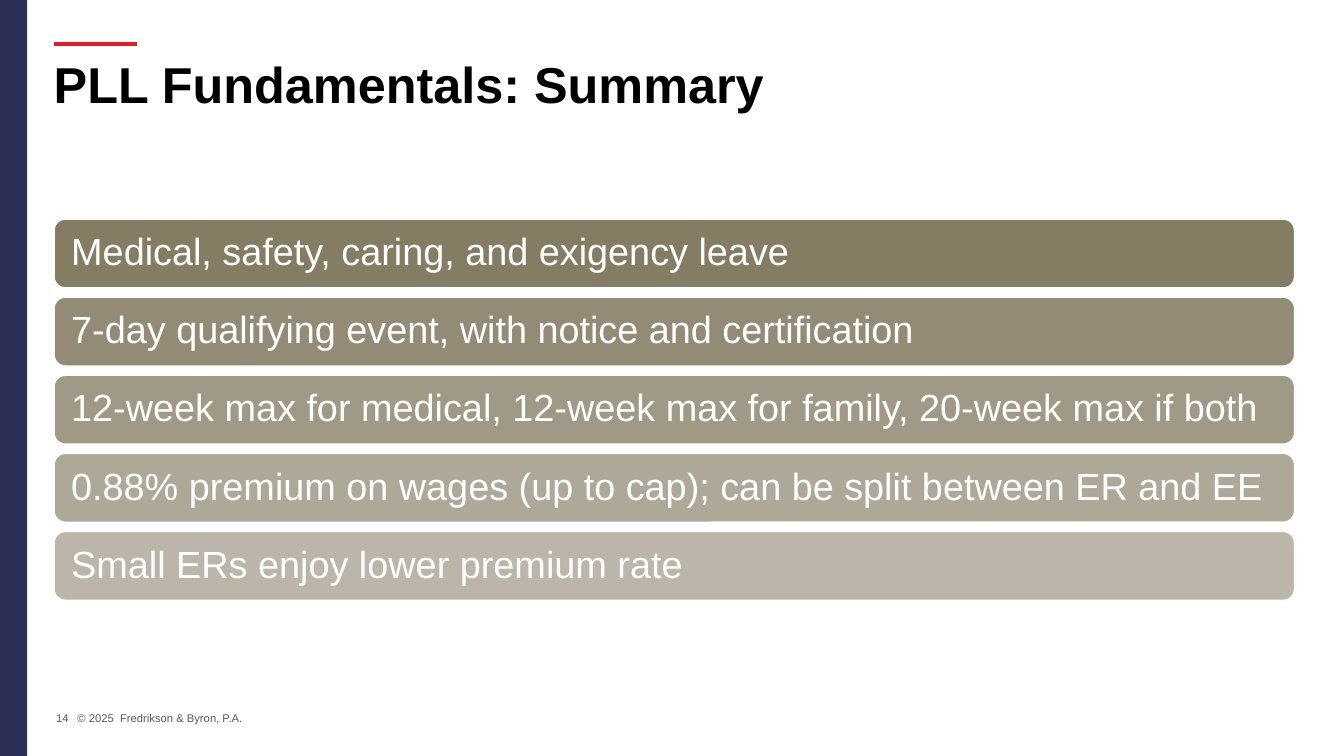
from dataclasses import dataclass

from lxml.etree import SubElement
from pptx import Presentation
from pptx.dml.color import RGBColor
from pptx.enum.shapes import MSO_CONNECTOR, MSO_SHAPE
from pptx.enum.text import MSO_ANCHOR, MSO_AUTO_SIZE, PP_ALIGN
from pptx.oxml.ns import qn
from pptx.util import Inches, Pt

SLIDE_WIDTH, SLIDE_HEIGHT = Inches(13.33), Inches(7.5)
NAVY, RED, TAUPE = "2C3054", "E31B23", "786E54"
WHITE, BLACK, GRAY = "FFFFFF", "000000", "595959"

MARGIN = 4
BAR_TOP, BAR_PITCH = 28.93, 10.33
BAR_WIDTH, BAR_HEIGHT = 92.35, 9.2


@dataclass(frozen=True)
class Box:
    """Place on the slide, in percent of its width and height."""
    left: float
    top: float
    width: float
    height: float

    def lengths(self) -> tuple[int, int, int, int]:
        return (across(self.left), down(self.top),
                across(self.width), down(self.height))


@dataclass(frozen=True)
class SummaryPoint:
    text: str
    opacity: int


@dataclass(frozen=True)
class FooterPart:
    text: str
    box: Box
    align: PP_ALIGN


SUMMARY = [
    SummaryPoint("Medical, safety, caring, and exigency leave", 90),
    SummaryPoint("7-day qualifying event, with notice and certification", 80),
    SummaryPoint("12-week max for medical, 12-week max for family, 20-week max if both", 70),
    SummaryPoint("0.88% premium on wages (up to cap); can be split between ER and EE", 60),
    SummaryPoint("Small ERs enjoy lower premium rate", 50),
]
FOOTER = [
    FooterPart("© 2025  Fredrikson & Byron, P.A.", Box(5.03, 93.33, 14.55, 3.33), PP_ALIGN.LEFT),
    FooterPart("14", Box(2.55, 93.07, 3.3, 3.73), PP_ALIGN.RIGHT),
]


def across(percent: float) -> int:
    return round(SLIDE_WIDTH * percent / 100)


def down(percent: float) -> int:
    return round(SLIDE_HEIGHT * percent / 100)


def color(hex_code: str) -> RGBColor:
    return RGBColor.from_string(hex_code)


def write(shape, text: str, *, size: float, ink: str, bold: bool = False,
          align: PP_ALIGN = PP_ALIGN.LEFT, spacing: float = 1.0,
          insets: tuple[float, float, float, float] = (0.1, 0.05, 0.1, 0.05)) -> None:
    """Fill a shape with one paragraph; insets are left, top, right, bottom in inches."""
    frame = shape.text_frame
    frame.word_wrap = True
    frame.auto_size = MSO_AUTO_SIZE.NONE
    frame.vertical_anchor = MSO_ANCHOR.MIDDLE
    (frame.margin_left, frame.margin_top,
     frame.margin_right, frame.margin_bottom) = map(Inches, insets)
    paragraph = frame.paragraphs[0]
    paragraph.alignment = align
    paragraph.line_spacing = spacing
    run = paragraph.add_run()
    run.text = text
    run.font.name = "Arial"
    run.font.size = Pt(size)
    run.font.bold = bold
    run.font.color.rgb = color(ink)


def add_panel(slide, kind: MSO_SHAPE, box: Box, fill: str):
    panel = slide.shapes.add_shape(kind, *box.lengths())
    panel.shadow.inherit = False
    panel.fill.solid()
    panel.fill.fore_color.rgb = color(fill)
    panel.line.fill.background()
    return panel


def add_accent(slide) -> None:
    height = down(5.82)
    accent = slide.shapes.add_connector(
        MSO_CONNECTOR.STRAIGHT, across(MARGIN), height, across(10.2), height)
    accent.line.color.rgb = color(RED)
    accent.line.width = Pt(3)
    SubElement(accent._element.spPr, qn("a:effectLst"))


def add_summary_bar(slide, row: int, point: SummaryPoint) -> None:
    box = Box(MARGIN, BAR_TOP + row * BAR_PITCH, BAR_WIDTH, BAR_HEIGHT)
    bar = add_panel(slide, MSO_SHAPE.ROUNDED_RECTANGLE, box, TAUPE)
    fill_color = bar._element.spPr.find(qn("a:solidFill"))[0]
    SubElement(fill_color, qn("a:alpha"), val=str(point.opacity * 1000))
    bar.line.color.rgb = color(WHITE)
    bar.line.width = Pt(1.5)
    write(bar, point.text, size=27, ink=WHITE, spacing=0.9,
          insets=(0.14, 0.11, 0.14, 0.11))


def main() -> None:
    deck = Presentation()
    deck.slide_width, deck.slide_height = SLIDE_WIDTH, SLIDE_HEIGHT
    slide = deck.slides.add_slide(deck.slide_layouts[5])

    title = slide.shapes.title
    title.left, title.top, title.width, title.height = Box(MARGIN, 5.2, 92.27, 10.67).lengths()
    write(title, "PLL Fundamentals: Summary", size=36, ink=BLACK, bold=True,
          spacing=0.9, insets=(0, 0.2, 0.1, 0.05))

    add_panel(slide, MSO_SHAPE.RECTANGLE, Box(0, 0, 2.03, 100), NAVY)
    add_accent(slide)
    for row, point in enumerate(SUMMARY):
        add_summary_bar(slide, row, point)
    for part in FOOTER:
        write(slide.shapes.add_textbox(*part.box.lengths()), part.text,
              size=8, ink=GRAY, align=part.align)

    deck.save("out.pptx")


if __name__ == "__main__":
    main()
